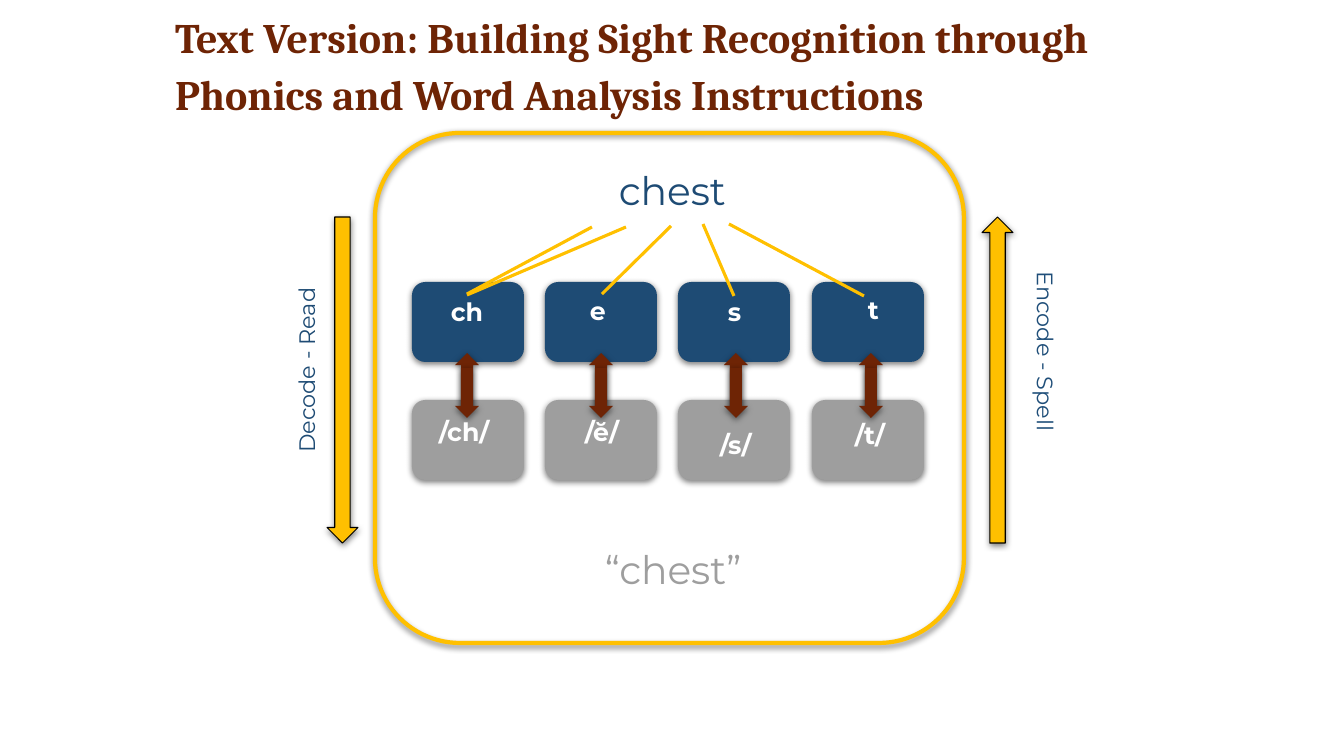
from dataclasses import dataclass

from pptx import Presentation
from pptx.dml.color import RGBColor
from pptx.enum.shapes import MSO_CONNECTOR, MSO_SHAPE
from pptx.enum.text import MSO_ANCHOR, PP_ALIGN
from pptx.oxml.ns import qn
from pptx.util import Pt
from lxml import etree

ROUND = MSO_SHAPE.ROUNDED_RECTANGLE
ARROW = MSO_SHAPE.DOWN_ARROW
STRAIGHT = MSO_CONNECTOR.STRAIGHT
LEFT = PP_ALIGN.LEFT
TOP = MSO_ANCHOR.TOP
MIDDLE = MSO_ANCHOR.MIDDLE
SCALE = 914400 / 100.8


@dataclass(frozen=True)
class Theme:
    brown: str = "6E2405"
    blue: str = "1E4B74"
    navy: str = "1F4E79"
    gray: str = "9E9E9E"
    gold: str = "FFC000"
    white: str = "FFFFFF"
    black: str = "000000"
    serif: str = "Cambria"
    sans: str = "Montserrat"
    title: int = 30
    word: int = 28
    label: int = 18
    side: int = 16


THEME = Theme()


def px(*values):
    return [round(value * SCALE) for value in values]


def color(code):
    return RGBColor.from_string(code)


def write(frame, text, size, tint, face, bold=False, space=1.08):
    frame.text = text
    frame.word_wrap = True
    line = frame.paragraphs[0]
    line.alignment = LEFT
    line.line_spacing = space
    font = line.runs[0].font
    font.name, font.size, font.bold = face, Pt(size), bold
    font.color.rgb = color(tint)


def add_title(slide, text):
    title = slide.shapes.title
    title.left, title.top, title.width, title.height = px(165, 20, 1087, 83)
    title.text_frame.vertical_anchor = MIDDLE
    write(title.text_frame, text, THEME.title, THEME.brown, THEME.serif, True, 1.15)


def add_text(slide, text, box, size, tint, bold=False, turn=0):
    label = slide.shapes.add_textbox(*px(*box))
    label.rotation = turn
    frame = label.text_frame
    frame.vertical_anchor = TOP
    frame.margin_left, frame.margin_top, frame.margin_right = px(16, 5, 0)
    write(frame, text, size, tint, THEME.sans, bold)


def add_shade(shape):
    shape.shadow.inherit = False
    effects = shape._element.spPr.find(qn("a:effectLst"))
    shade = etree.SubElement(effects, qn("a:outerShdw"), blurRad="57150",
                             dist="19050", dir="5400000", algn="t", rotWithShape="0")
    tint = etree.SubElement(shade, qn("a:srgbClr"), val=THEME.black)
    etree.SubElement(tint, qn("a:alpha"), val="49000")


def add_block(slide, kind, box, fill=None, edge=None, width=0, turn=0):
    block = slide.shapes.add_shape(kind, *px(*box))
    block.rotation = turn
    if fill:
        block.fill.solid()
        block.fill.fore_color.rgb = color(fill)
    else:
        block.fill.background()
    if edge:
        block.line.color.rgb = color(edge)
        block.line.width = Pt(width)
    else:
        block.line.fill.background()
    add_shade(block)


def add_line(slide, start, end):
    line = slide.shapes.add_connector(STRAIGHT, *px(*start, *end))
    line.line.color.rgb = color(THEME.gold)
    line.line.width = Pt(2.25)
    etree.SubElement(line._element.spPr, qn("a:effectLst"))


def main():
    deck = Presentation()
    deck.slide_width, deck.slide_height = px(1344, 756)
    slide = deck.slides.add_slide(deck.slide_layouts[5])
    add_title(slide, "Text Version: Building Sight Recognition through "
                     "Phonics and Word Analysis Instructions")

    add_block(slide, ROUND, (375, 133, 589, 510), edge=THEME.gold, width=3)
    add_text(slide, "chest", (603, 158, 182, 134), THEME.word, THEME.blue)
    add_text(slide, "“chest”", (589, 537, 247, 100), THEME.word, THEME.gray)
    add_text(slide, "Decode - Read", (196, 302, 256, 77), THEME.side, THEME.blue, turn=270)
    add_text(slide, "Encode - Spell", (904, 364, 271, 54), THEME.side, THEME.navy, turn=90)

    for top, fill in ((282, THEME.blue), (400, THEME.gray)):
        for col in range(4):
            add_block(slide, ROUND, (412 + col * 400 // 3, top, 112, 80), fill)

    for top, tall, turn in ((353, 53, 180), (368, 50, 0)):
        for col in range(4):
            add_block(slide, ARROW, (455 + col * 404 // 3, top, 24, tall),
                      THEME.brown, turn=turn)

    rays = (
        ((729, 224), (864, 296)),
        ((703, 224), (734, 296)),
        ((671, 226), (602, 294)),
        ((626, 227), (467, 295)),
        ((592, 227), (467, 294)),
    )
    for start, end in rays:
        add_line(slide, start, end)

    for left, turn in ((327, 0), (982, 180)):
        add_block(slide, ARROW, (left, 217, 31, 326), THEME.gold, THEME.black, 0.75, turn)

    labels = (
        ("ch", 435, 289), ("e", 574, 288), ("s", 712, 289), ("t", 852, 287),
        ("/ch/", 423, 409), ("/ĕ/", 569, 409), ("/s/", 704, 422), ("/t/", 839, 412),
    )
    for text, left, top in labels:
        add_text(slide, text, (left, top, 90, 50), THEME.label, THEME.white, True)

    deck.save("out.pptx")


if __name__ == "__main__":
    main()
